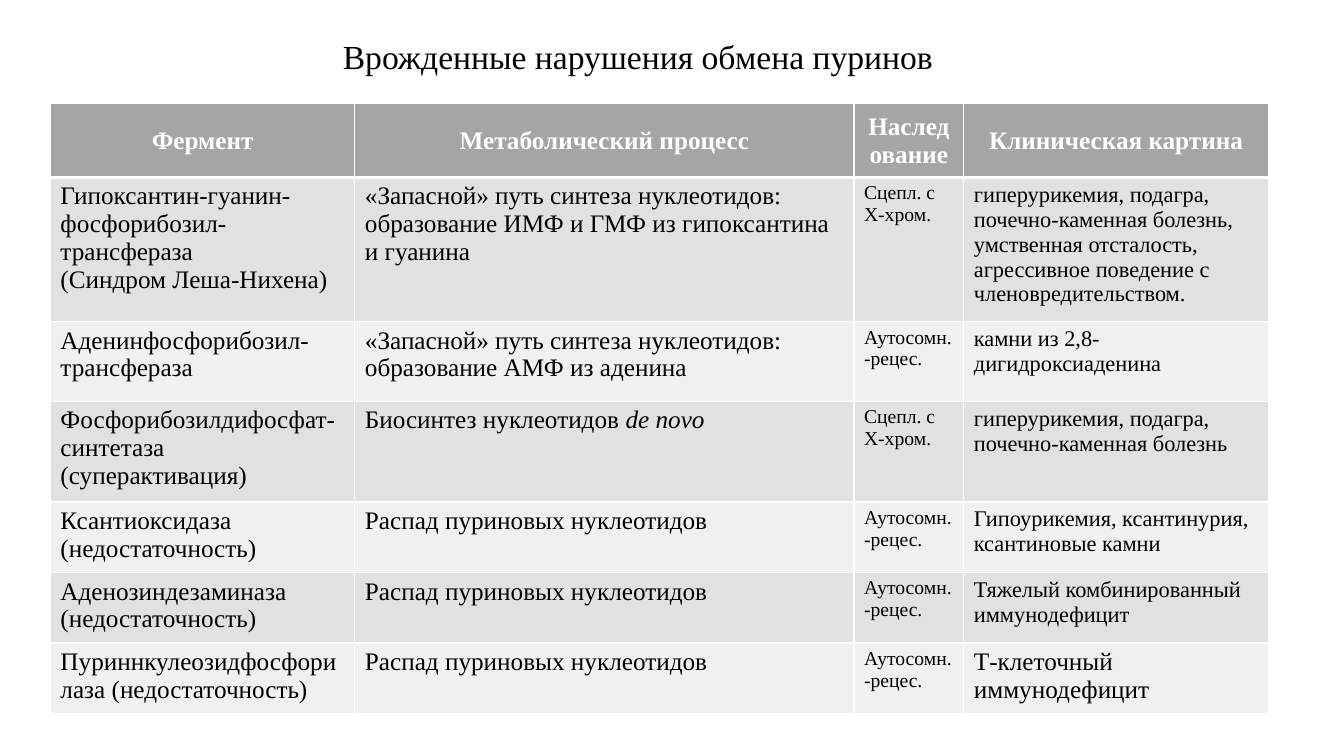
import pptx
import pptx.dml.color
import pptx.enum.text
import pptx.oxml
import pptx.oxml.ns
import pptx.util

Inches = pptx.util.Inches
ALIGN = pptx.enum.text.PP_ALIGN
ANCHOR = pptx.enum.text.MSO_ANCHOR

FONT = "Times New Roman"
BLACK, WHITE = "000000", "FFFFFF"
HEADER_FILL = "A5A5A5"
BAND_FILLS = ["E1E1E1", "F0F0F0"]
COLUMN_WIDTHS = [3.02, 4.95, 1.09, 3.02]
ROW_HEIGHTS = [0.73, 1.43, 0.79, 1.0, 0.7, 0.7, 0.7]
BODY_SIZES = [18, 18, 14, 16]

X_LINKED = "Сцепл. с Х-хром."
RECESSIVE = "Аутосомн.-рецес."
BREAKDOWN = "Распад пуриновых нуклеотидов"
LATIN_TERM = "de novo"

HEADINGS = ["Фермент", "Метаболический процесс", "Наследование", "Клиническая картина"]
DISORDERS = [
    ["Гипоксантин-гуанин-фосфорибозил-трансфераза\n(Синдром Леша-Нихена)",
     "«Запасной» путь синтеза нуклеотидов: образование ИМФ и ГМФ из гипоксантина и гуанина",
     X_LINKED,
     "гиперурикемия, подагра, почечно-каменная болезнь, умственная отсталость, "
     "агрессивное поведение с членовредительством."],
    ["Аденинфосфорибозил-трансфераза",
     "«Запасной» путь синтеза нуклеотидов: образование АМФ из аденина",
     RECESSIVE, "камни из 2,8-дигидроксиаденина"],
    ["Фосфорибозилдифосфат-синтетаза (суперактивация)",
     "Биосинтез нуклеотидов " + LATIN_TERM,
     X_LINKED, "гиперурикемия, подагра, почечно-каменная болезнь"],
    ["Ксантиоксидаза (недостаточность)", BREAKDOWN, RECESSIVE,
     "Гипоурикемия, ксантинурия, ксантиновые камни"],
    ["Аденозиндезаминаза\n(недостаточность)", BREAKDOWN, RECESSIVE,
     "Тяжелый комбинированный иммунодефицит"],
    ["Пуриннкулеозидфосфорилаза (недостаточность)", BREAKDOWN, RECESSIVE,
     "Т-клеточный иммунодефицит"],
]


def color(value):
    return pptx.dml.color.RGBColor.from_string(value)


def set_attributes(target, values):
    for name, value in values.items():
        setattr(target, name, value)


def write_text(text_frame, text, size, text_color, bold=False, alignment=ALIGN.LEFT):
    for index, line in enumerate(text.split("\n")):
        paragraph = text_frame.add_paragraph() if index else text_frame.paragraphs[0]
        paragraph.alignment = alignment
        for part in line.partition(LATIN_TERM):
            if part:
                run = paragraph.add_run()
                run.text = part
                set_attributes(run.font, {
                    "name": FONT, "size": pptx.util.Pt(size),
                    "bold": bold, "italic": part == LATIN_TERM})
                run.font.color.rgb = color(text_color)


def set_borders(cell, widths):
    properties = cell._tc.get_or_add_tcPr()
    for index, (side, width) in enumerate(widths.items()):
        line = pptx.oxml.parse_xml(
            f'<a:ln{side} {pptx.oxml.ns.nsdecls("a")} w="{pptx.util.Pt(width)}">'
            f'<a:solidFill><a:srgbClr val="{WHITE}"/></a:solidFill></a:ln{side}>')
        properties.insert(index, line)


def add_title(slide, left, top, width, height):
    title = slide.shapes.title
    set_attributes(title, {"left": Inches(left), "top": Inches(top),
                           "width": Inches(width), "height": Inches(height)})
    set_attributes(title.text_frame, {
        "word_wrap": True, "vertical_anchor": ANCHOR.TOP,
        "auto_size": pptx.enum.text.MSO_AUTO_SIZE.NONE})
    write_text(title.text_frame, "Врожденные нарушения обмена пуринов", 24, BLACK)


def add_disorder_table(slide, left, top, width, height):
    rows = [HEADINGS] + DISORDERS
    table = slide.shapes.add_table(
        len(rows), len(HEADINGS), Inches(left), Inches(top),
        Inches(width), Inches(height)).table
    for column, share in zip(table.columns, COLUMN_WIDTHS):
        column.width = Inches(width * share / sum(COLUMN_WIDTHS))
    for row, share in zip(table.rows, ROW_HEIGHTS):
        row.height = Inches(height * share / sum(ROW_HEIGHTS))
    for row_index, texts in enumerate(rows):
        is_header = row_index == 0
        for column_index, text in enumerate(texts):
            cell = table.cell(row_index, column_index)
            cell.fill.solid()
            cell.fill.fore_color.rgb = color(
                HEADER_FILL if is_header else BAND_FILLS[(row_index - 1) % 2])
            set_borders(cell, {"L": 1, "R": 1, "T": 3 if row_index == 1 else 1,
                               "B": 3 if is_header else 1})
            if is_header:
                cell.vertical_anchor = ANCHOR.MIDDLE
                write_text(cell.text_frame, text, 18, WHITE, True, ALIGN.CENTER)
            else:
                is_last = row_index == len(rows) - 1 and column_index == len(texts) - 1
                size = 18 if is_last else BODY_SIZES[column_index]
                write_text(cell.text_frame, text, size, BLACK)


def main():
    presentation = pptx.Presentation()
    set_attributes(presentation, {"slide_width": Inches(13.33), "slide_height": Inches(7.5)})
    slide = presentation.slides.add_slide(presentation.slide_layouts.get_by_name("Title Only"))
    add_title(slide, 3.3, 0.31, 6.21, 0.5)
    add_disorder_table(slide, 0.5, 1.03, sum(COLUMN_WIDTHS), sum(ROW_HEIGHTS))
    presentation.save("out.pptx")


if __name__ == "__main__":
    main()
